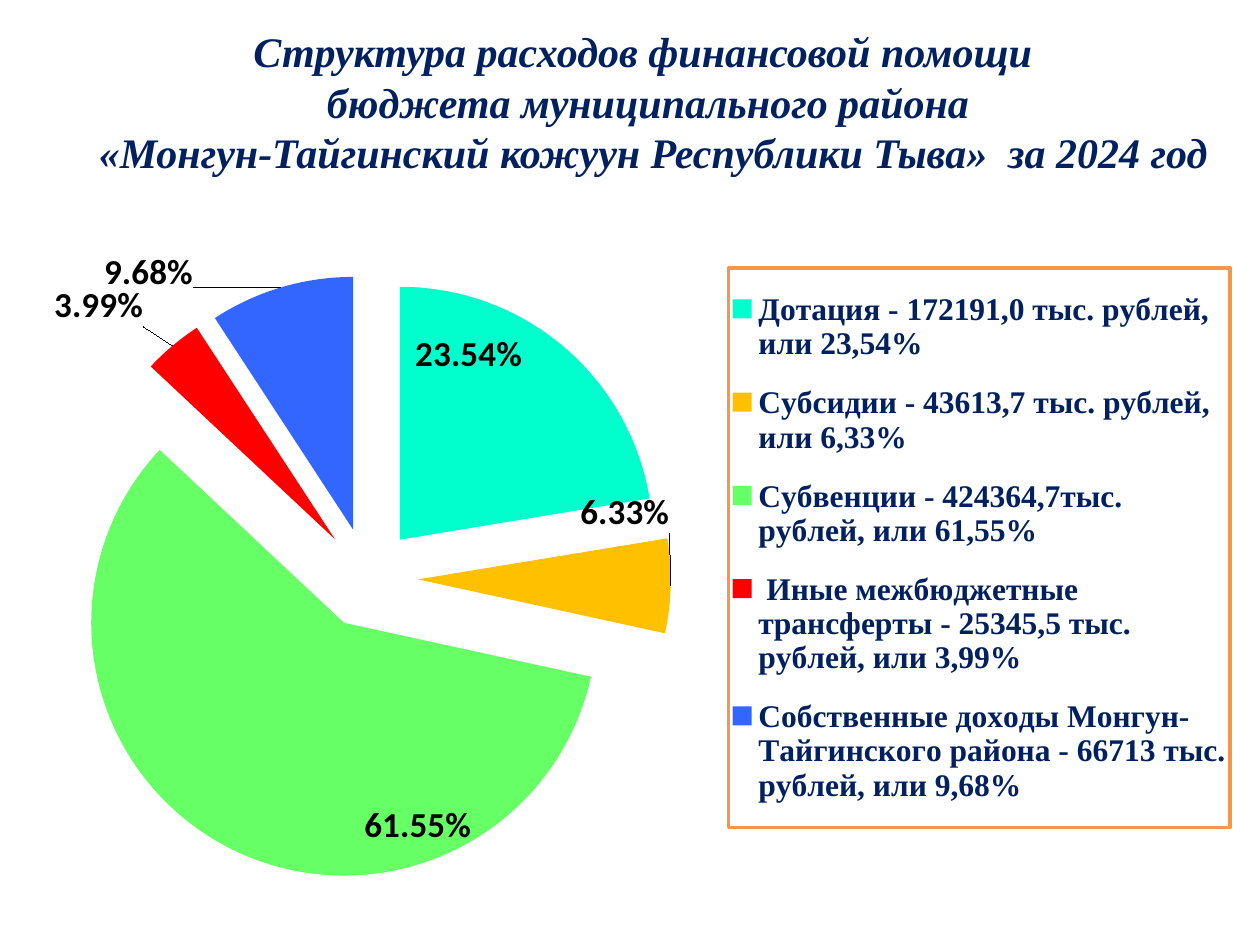
from dataclasses import dataclass

from lxml.etree import SubElement
from pptx import Presentation
from pptx.chart.chart import Chart
from pptx.chart.data import CategoryChartData
from pptx.dml.color import RGBColor
from pptx.enum.chart import XL_CHART_TYPE, XL_LABEL_POSITION, XL_LEGEND_POSITION
from pptx.enum.text import MSO_ANCHOR, MSO_AUTO_SIZE, PP_ALIGN
from pptx.oxml import parse_xml
from pptx.oxml.ns import nsdecls, qn
from pptx.slide import Slide
from pptx.util import Pt


@dataclass(frozen=True)
class Theme:
    navy: RGBColor = RGBColor(0x00, 0x20, 0x60)
    black: RGBColor = RGBColor(0, 0, 0)
    legend_border: str = "F79646"
    serif: str = "Times New Roman"
    sans: str = "Calibri"
    title_size: int = 24
    chart_size: int = 18
    label_size: int = 20


@dataclass(frozen=True)
class Slice:
    category: str
    value: float
    color: str
    label_position: XL_LABEL_POSITION
    label_offset: tuple[float, float]


THEME = Theme()
PERCENT = "0.00%"
INSIDE = XL_LABEL_POSITION.INSIDE_END
OUTSIDE = XL_LABEL_POSITION.OUTSIDE_END
TITLE_LINES = (
    "Структура расходов финансовой помощи ",
    "бюджета муниципального района",
    " «Монгун-Тайгинский кожуун Республики Тыва»  за 2024 год",
)
SLICES = (
    Slice("Дотация - 172191,0 тыс. рублей, или 23,54%", 0.2354, "00FFCC", INSIDE, (-0.03, -0.03)),
    Slice("Субсидии - 43613,7 тыс. рублей, или 6,33%", 0.0633, "FFC000", OUTSIDE, (-0.08, -0.11)),
    Slice("Субвенции - 424364,7тыс. рублей, или 61,55%", 0.6155, "66FF66", INSIDE, (0.11, 0.01)),
    Slice(" Иные межбюджетные трансферты - 25345,5 тыс. рублей, или 3,99%",
          0.0399, "FF0000", OUTSIDE, (-0.02, -0.02)),
    Slice("Собственные доходы Монгун-Тайгинского района - 66713 тыс. рублей, или 9,68%",
          0.0968, "3366FF", OUTSIDE, (-0.07, 0.02)),
)


def make_layout(**settings: str | float):
    layout = parse_xml(f"<c:layout {nsdecls('c')}/>")
    manual = SubElement(layout, qn("c:manualLayout"))
    for name, value in settings.items():
        SubElement(manual, qn(f"c:{name}")).set("val", str(value))
    return layout


def edge_layout(x: float, y: float, w: float, h: float, **target: str):
    return make_layout(**target, xMode="edge", yMode="edge", x=x, y=y, w=w, h=h)


def add_title(slide: Slide) -> None:
    shape = slide.shapes.add_textbox(Pt(10.8), Pt(10.8), Pt(691.9), Pt(94.3))
    frame = shape.text_frame
    frame.word_wrap = False
    frame.auto_size = MSO_AUTO_SIZE.SHAPE_TO_FIT_TEXT
    frame.vertical_anchor = MSO_ANCHOR.MIDDLE
    for index, line in enumerate(TITLE_LINES):
        paragraph = frame.add_paragraph() if index else frame.paragraphs[0]
        paragraph.alignment = PP_ALIGN.CENTER
        properties = paragraph._p.get_or_add_pPr()
        properties.set("marL", "0")
        properties.set("indent", str(Pt(27)))
        run = paragraph.add_run()
        run.text = line
        run.font.name = THEME.serif
        run.font.size = Pt(THEME.title_size)
        run.font.bold = run.font.italic = True
        run.font.color.rgb = THEME.navy


def format_slices(chart: Chart) -> None:
    series = chart.plots[0].series[0]
    explosion = parse_xml(f'<c:explosion {nsdecls("c")} val="20"/>')
    series._element.find(qn("c:tx")).addnext(explosion)
    for index, item in enumerate(SLICES):
        point = series.points[index]
        point.format.fill.solid()
        point.format.fill.fore_color.rgb = RGBColor.from_string(item.color)
        label = point.data_label
        label.font.size = Pt(THEME.label_size)
        label.font.bold = True
        label.font.color.rgb = THEME.black
        label.position = item.label_position
        x, y = item.label_offset
        layout = make_layout(x=x, y=y)
        element = series._element.find(qn("c:dLbls")).findall(qn("c:dLbl"))[index]
        element.find(qn("c:idx")).addnext(layout)
        layout.addnext(parse_xml(
            f'<c:numFmt {nsdecls("c")} formatCode="{PERCENT}" sourceLinked="0"/>'))


def format_legend(chart: Chart) -> None:
    chart.has_legend = True
    legend = chart.legend
    legend.position = XL_LEGEND_POSITION.RIGHT
    legend.include_in_layout = False
    legend.font.name = THEME.serif
    legend.font.size = Pt(THEME.chart_size)
    legend.font.bold = True
    legend.font.color.rgb = THEME.navy
    element = legend._element
    for previous in element.findall(qn("c:layout")):
        element.remove(previous)
    element.find(qn("c:legendPos")).addnext(edge_layout(0.58, 0.08, 0.41, 0.83))
    element.find(qn("c:txPr")).addprevious(parse_xml(
        f'<c:spPr {nsdecls("c", "a")}><a:ln w="{Pt(2)}"><a:solidFill>'
        f'<a:srgbClr val="{THEME.legend_border}"/></a:solidFill></a:ln></c:spPr>'))


def add_pie(slide: Slide) -> None:
    data = CategoryChartData(number_format=PERCENT)
    data.categories = [item.category for item in SLICES]
    data.add_series("Series 1", [item.value for item in SLICES])
    chart = slide.shapes.add_chart(
        XL_CHART_TYPE.PIE, Pt(10.8), Pt(122.4), Pt(699.1), Pt(385.2), data).chart
    chart.has_title = False
    chart.font.name = THEME.sans
    chart.font.size = Pt(THEME.chart_size)
    chart.font.color.rgb = THEME.black
    chart.plots[0].vary_by_categories = True
    plot_area = chart._chartSpace.chart.plotArea
    for previous in plot_area.findall(qn("c:layout")):
        plot_area.remove(previous)
    plot_area.insert(0, edge_layout(0, 0.09, 0.57, 0.9, layoutTarget="inner"))
    format_slices(chart)
    format_legend(chart)


def main() -> None:
    presentation = Presentation()
    presentation.slide_width, presentation.slide_height = Pt(720), Pt(540)
    slide = presentation.slides.add_slide(presentation.slide_layouts[6])
    add_pie(slide)
    add_title(slide)
    presentation.save("out.pptx")


if __name__ == "__main__":
    main()
